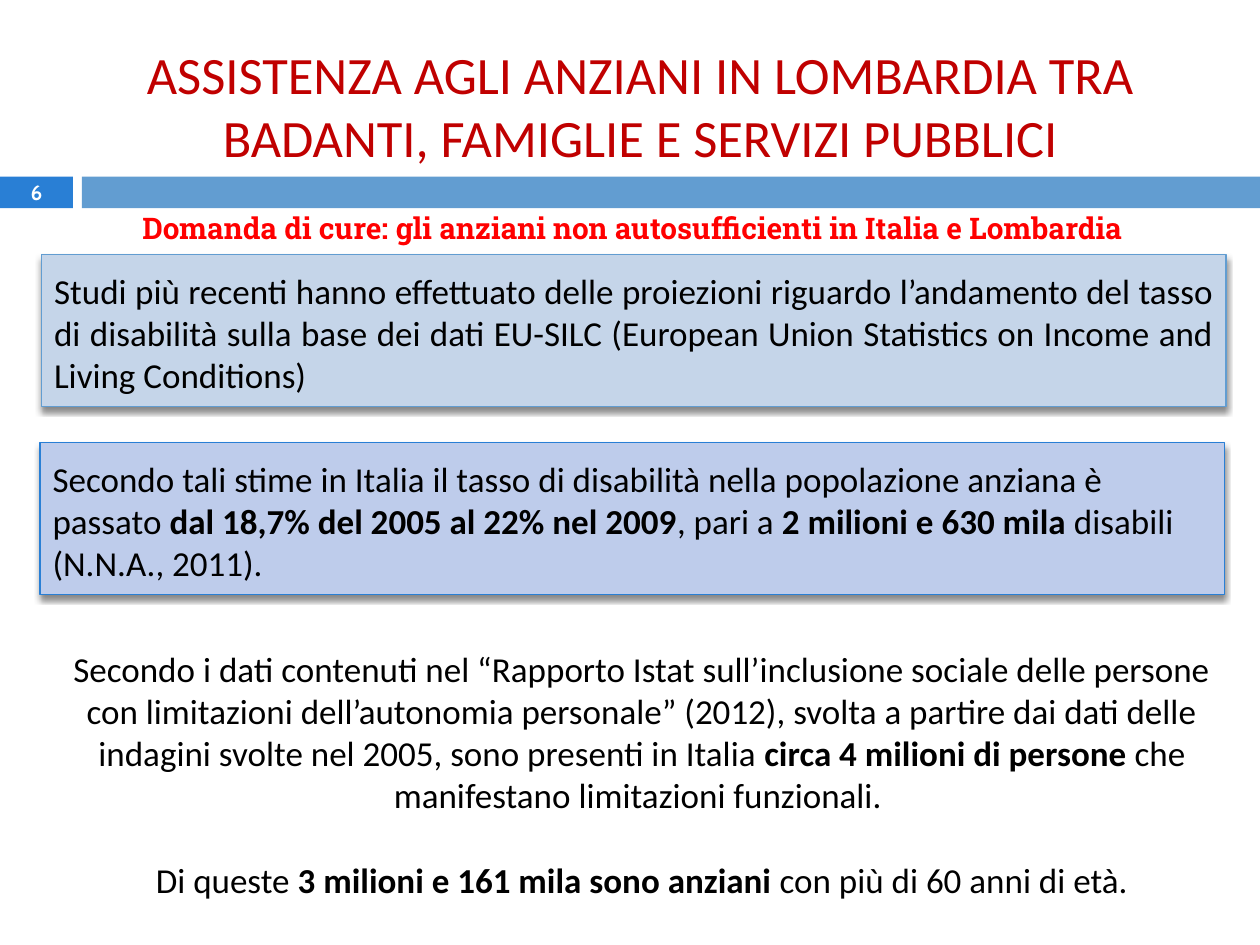
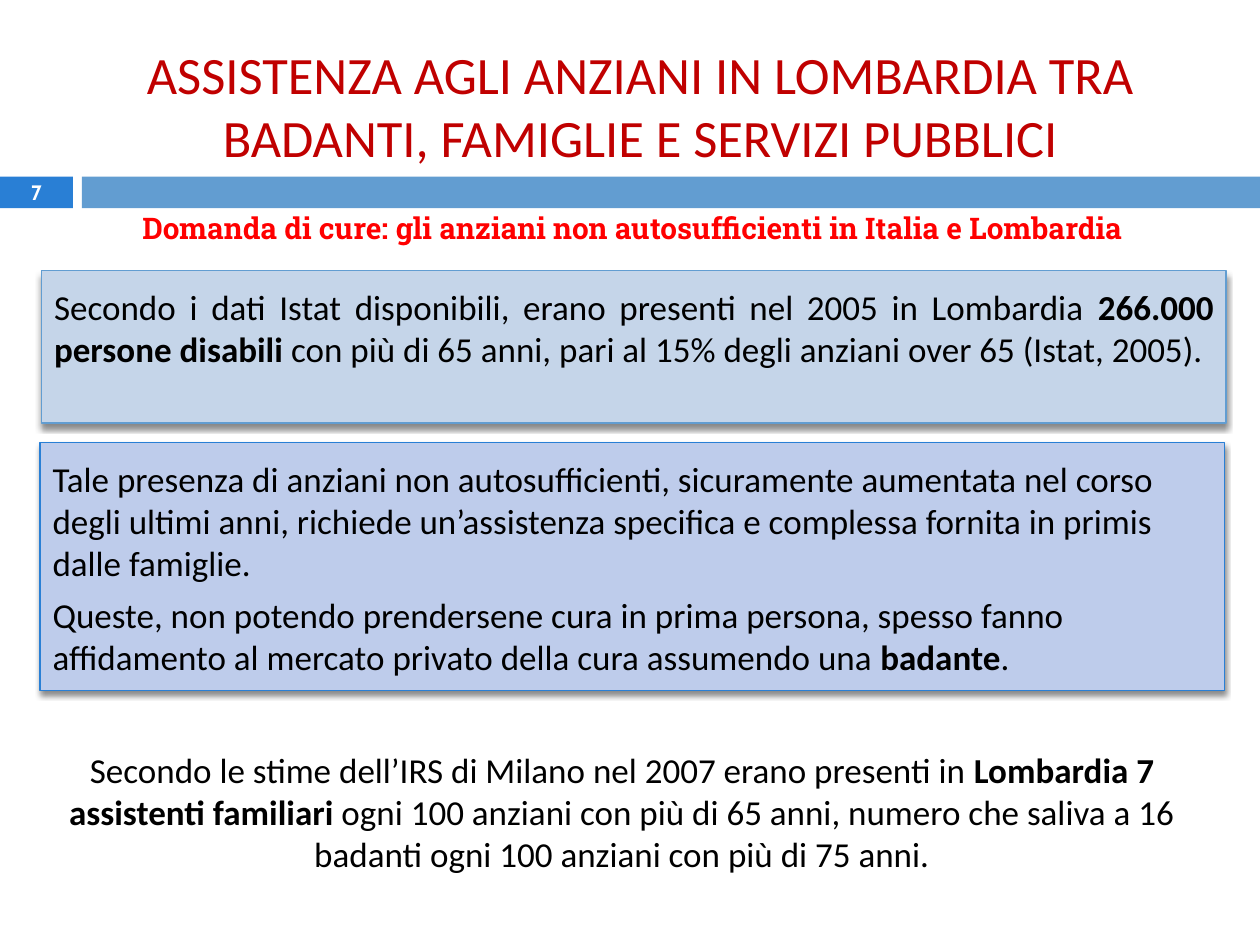
from dataclasses import dataclass
from typing import NamedTuple

from lxml.etree import SubElement
from pptx import Presentation
from pptx.dml.color import RGBColor
from pptx.enum.shapes import MSO_SHAPE as Preset
from pptx.enum.text import MSO_ANCHOR as Anchor, MSO_AUTO_SIZE as AutoSize, PP_ALIGN as Align
from pptx.oxml.ns import qn
from pptx.util import Cm, Pt

# Colours
TITLE_RED = RGBColor(0xC0, 0x00, 0x00)
SUBTITLE_RED = RGBColor(0xFF, 0x00, 0x00)
BLACK = RGBColor(0x00, 0x00, 0x00)
WHITE = RGBColor(0xFF, 0xFF, 0xFF)
STRONG_BLUE = RGBColor(0x29, 0x7F, 0xD5)
SOFT_BLUE = RGBColor(0x62, 0x9D, 0xD1)
PALE_BLUE = RGBColor(0xC5, 0xD5, 0xE9)
PALE_VIOLET = RGBColor(0xBE, 0xCC, 0xEB)

# Shared wording
TITLE = "ASSISTENZA AGLI ANZIANI IN LOMBARDIA TRA BADANTI, FAMIGLIE E SERVIZI PUBBLICI"
SUBTITLE = "Domanda di cure: gli anziani non autosufficienti in Italia e Lombardia"
FIRST_NUMBER = 6
TITLE_ONLY = 5


class Box(NamedTuple):
    """Left, top, width and height in centimetres."""
    left: float
    top: float
    width: float
    height: float

    def lengths(self) -> list[Cm]:
        return [Cm(value) for value in self]


class Words(NamedTuple):
    text: str
    bold: bool = False


Paragraphs = list[list[Words]]


@dataclass(frozen=True)
class TextStyle:
    font: str
    size: float
    color: RGBColor
    align: Align = Align.CENTER
    anchor: Anchor = Anchor.TOP
    space_before: float = 0
    space_after: float = 0


@dataclass(frozen=True)
class PanelStyle:
    fill: RGBColor
    line: RGBColor
    text: TextStyle


@dataclass(frozen=True)
class Panel:
    box: Box
    style: PanelStyle
    paragraphs: Paragraphs


@dataclass(frozen=True)
class Page:
    panels: list[Panel]
    closing_box: Box
    closing: Paragraphs


# Text and panel styles
TITLE_STYLE = TextStyle("Calibri", 30, TITLE_RED)
NUMBER_STYLE = TextStyle("Cabin", 11.9, WHITE, anchor=Anchor.MIDDLE)
SUBTITLE_STYLE = TextStyle("Roboto Slab", 17, SUBTITLE_RED)
CLOSING_STYLE = TextStyle("Calibri", 20, BLACK, space_before=24.4)
UPPER_PANEL = PanelStyle(PALE_BLUE, SOFT_BLUE, TextStyle("Calibri", 20, BLACK, Align.JUSTIFY))
LOWER_PANEL = PanelStyle(PALE_VIOLET, STRONG_BLUE,
                         TextStyle("Calibri", 20, BLACK, Align.LEFT, space_after=6))

# Shared places
TITLE_BOX = Box(0.71, 0.71, 24.41, 2.82)
NUMBER_BOX = Box(0, 3.53, 1.47, 0.69)
SUBTITLE_BOX = Box(0.84, 4.11, 23.83, 0.99)
BANDS = [(Box(0, 3.56, 1.47, 0.64), STRONG_BLUE),
         (Box(1.65, 3.56, 23.75, 0.64), SOFT_BLUE)]

PAGES = [
    Page(
        [Panel(Box(0.84, 5.13, 23.88, 3.07), UPPER_PANEL, [[
            Words("Studi più recenti hanno effettuato delle proiezioni riguardo l’andamento "
                  "del tasso di disabilità sulla base dei dati EU-SILC (European Union "
                  "Statistics on Income and Living Conditions)")]]),
         Panel(Box(0.81, 8.92, 23.88, 3.07), LOWER_PANEL, [[
             Words("Secondo tali stime in Italia il tasso di disabilità nella popolazione "
                   "anziana è passato "),
             Words("dal 18,7% del 2005 al 22% nel 2009", True),
             Words(", pari a "),
             Words("2 milioni e 630 mila", True),
             Words(" disabili (N.N.A., 2011).")]])],
        Box(0.81, 12.93, 24.26, 5.38),
        [[Words("Secondo i dati contenuti nel “Rapporto Istat sull’inclusione sociale delle "
                "persone con limitazioni dell’autonomia personale” (2012), svolta a partire "
                "dai dati delle indagini svolte nel 2005, sono presenti in Italia "),
          Words("circa 4 milioni di persone ", True),
          Words("che manifestano limitazioni funzionali. ")],
         [Words("Di queste "),
          Words("3 milioni e 161 mila sono anziani ", True),
          Words("con più di 60 anni di età.")]]),
    Page(
        [Panel(Box(0.84, 5.46, 23.88, 3.07), UPPER_PANEL, [[
            Words("Secondo i dati Istat disponibili, erano presenti nel 2005 in Lombardia "),
            Words("266.000 persone disabili", True),
            Words(" con più di 65 anni, pari al 15% degli anziani over 65 (Istat, 2005).")]]),
         Panel(Box(0.81, 8.92, 23.88, 5), LOWER_PANEL, [
             [Words("Tale presenza di anziani non autosufficienti, sicuramente aumentata nel "
                    "corso degli ultimi anni, richiede un’assistenza specifica e complessa "
                    "fornita in primis dalle famiglie.")],
             [Words("Queste, non potendo prendersene cura in prima persona, spesso fanno "
                    "affidamento al mercato privato della cura assumendo una "),
              Words("badante", True),
              Words(".")]])],
        Box(0.41, 14.96, 24.26, 2.82),
        [[Words("Secondo le stime dell’IRS di Milano nel 2007 erano presenti in "),
          Words("Lombardia 7 assistenti familiari", True),
          Words(" ogni 100 anziani con più di 65 anni, numero che saliva a 16 badanti ogni "
                "100 anziani con più di 75 anni.")]]),
]


def write(shape, paragraphs: Paragraphs, style: TextStyle) -> None:
    """Fill a shape with styled paragraphs, run by run."""
    frame = shape.text_frame
    frame.word_wrap = True
    frame.auto_size = AutoSize.NONE
    frame.vertical_anchor = style.anchor
    for index, words_list in enumerate(paragraphs):
        paragraph = frame.add_paragraph() if index else frame.paragraphs[0]
        paragraph.alignment = style.align
        paragraph.space_before = Pt(style.space_before if index else 0)
        paragraph.space_after = Pt(style.space_after)
        for words in words_list:
            run = paragraph.add_run()
            run.text = words.text
            run.font.name = style.font
            run.font.size = Pt(style.size)
            run.font.bold = words.bold
            run.font.color.rgb = style.color


def add_text(slide, box: Box, paragraphs: Paragraphs, style: TextStyle) -> None:
    write(slide.shapes.add_textbox(*box.lengths()), paragraphs, style)


def add_rectangle(slide, box: Box, fill: RGBColor):
    shape = slide.shapes.add_shape(Preset.RECTANGLE, *box.lengths())
    shape.shadow.inherit = False
    shape.fill.solid()
    shape.fill.fore_color.rgb = fill
    shape.line.fill.background()
    return shape


def add_drop_shadow(shape) -> None:
    """Cast a soft black shadow straight down."""
    effects = shape.element.spPr.find(qn("a:effectLst"))
    shadow = SubElement(effects, qn("a:outerShdw"), blurRad=str(Pt(3)), dist=str(Pt(2.4)),
                        dir="5400000", rotWithShape="0")
    color = SubElement(shadow, qn("a:srgbClr"), val="000000")
    SubElement(color, qn("a:alpha"), val="45000")


def add_panel(slide, panel: Panel) -> None:
    shape = add_rectangle(slide, panel.box, panel.style.fill)
    shape.line.color.rgb = panel.style.line
    shape.line.width = Pt(0.79)
    add_drop_shadow(shape)
    frame = shape.text_frame
    frame.margin_left = frame.margin_right = Cm(0.25)
    frame.margin_top, frame.margin_bottom = Cm(0.3), Cm(0.2)
    write(shape, panel.paragraphs, panel.style.text)


def add_heading(slide, number: int) -> None:
    """Bands, title, slide number and subtitle shared by every slide."""
    for box, color in BANDS:
        add_rectangle(slide, box, color)
    title = slide.shapes.title
    title.left, title.top, title.width, title.height = TITLE_BOX.lengths()
    write(title, [[Words(TITLE)]], TITLE_STYLE)
    add_text(slide, NUMBER_BOX, [[Words(str(number), True)]], NUMBER_STYLE)
    add_text(slide, SUBTITLE_BOX, [[Words(SUBTITLE, True)]], SUBTITLE_STYLE)


def main() -> None:
    presentation = Presentation()
    presentation.slide_width, presentation.slide_height = Cm(25.4), Cm(19.05)
    for number, page in enumerate(PAGES, FIRST_NUMBER):
        slide = presentation.slides.add_slide(presentation.slide_layouts[TITLE_ONLY])
        add_heading(slide, number)
        for panel in page.panels:
            add_panel(slide, panel)
        add_text(slide, page.closing_box, page.closing, CLOSING_STYLE)
    presentation.save("out.pptx")


if __name__ == "__main__":
    main()
